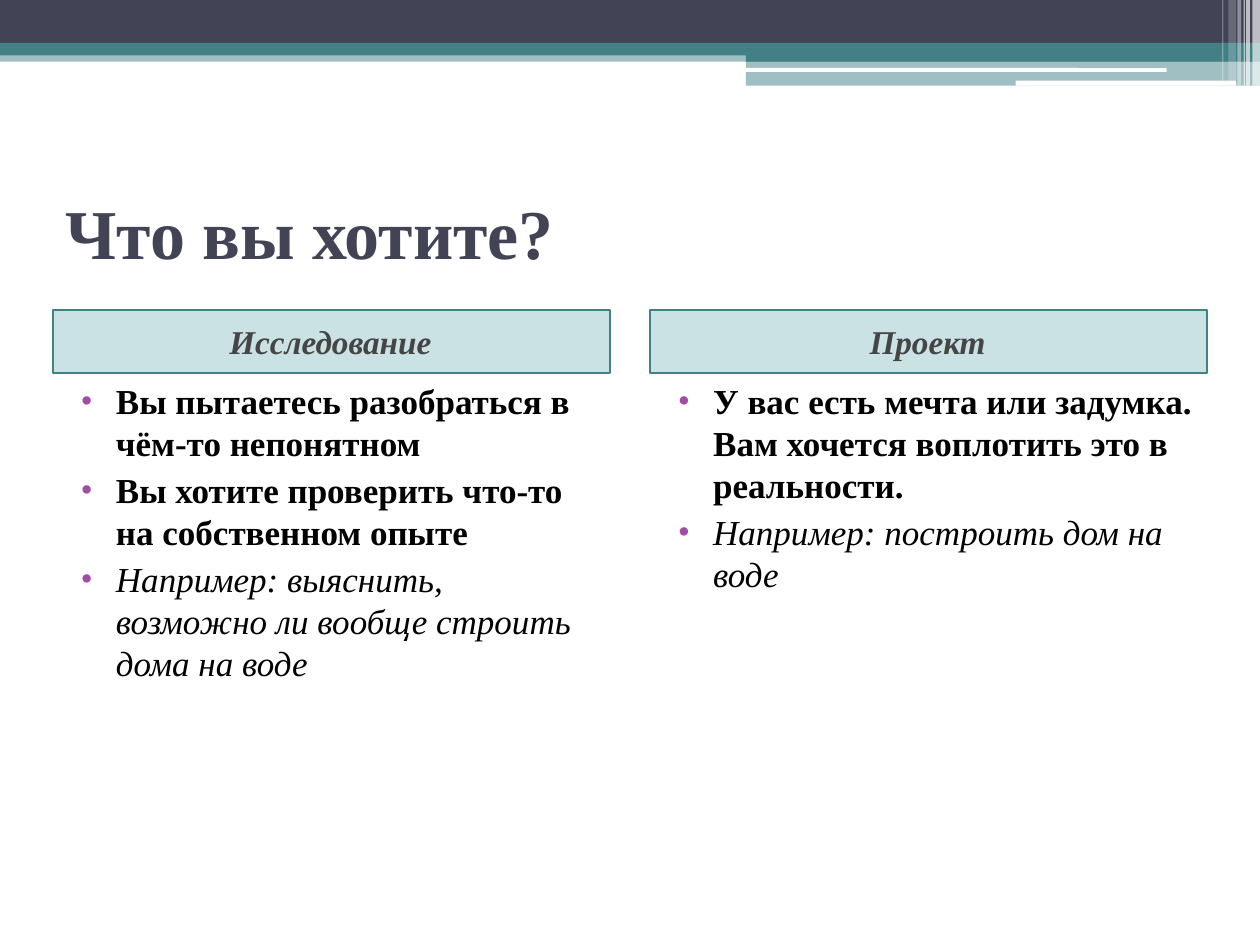
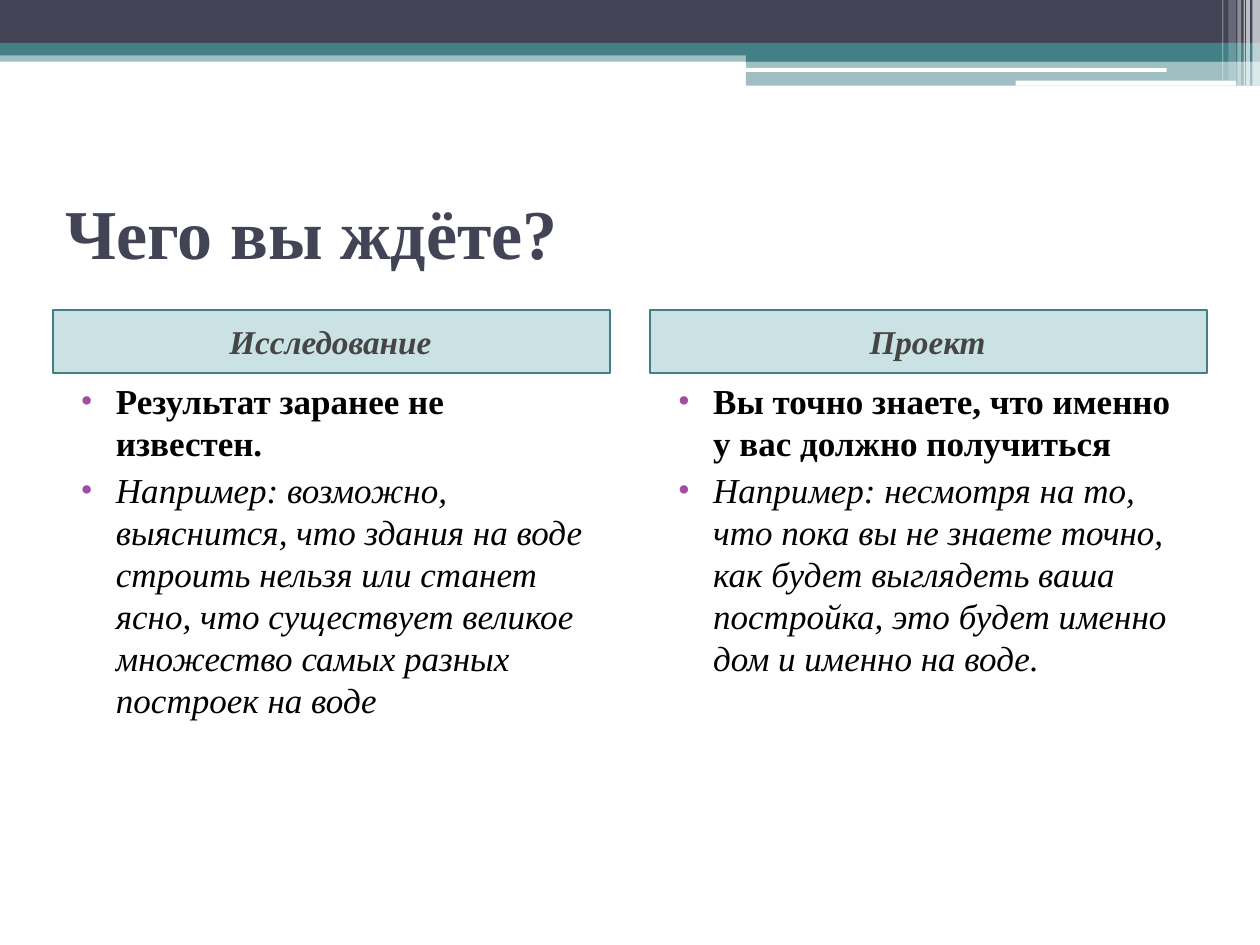
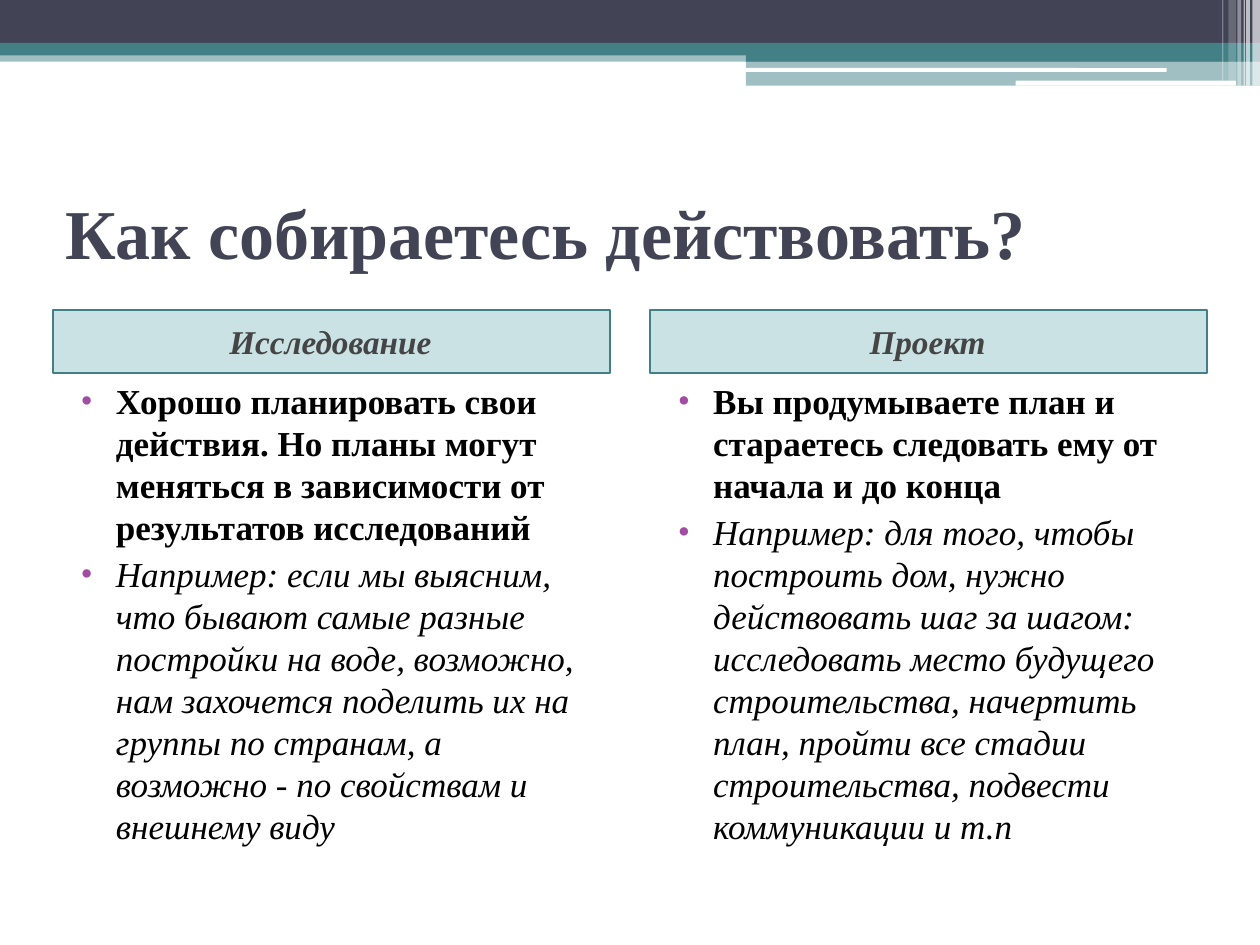
from lxml.etree import SubElement
from pptx import Presentation
from pptx.dml.color import RGBColor
from pptx.enum.shapes import MSO_SHAPE
from pptx.enum.text import MSO_ANCHOR, MSO_AUTO_SIZE, PP_ALIGN
from pptx.oxml.ns import qn
from pptx.util import Pt

COLORS = {
    "navy": "424456", "teal": "438086", "white": "FFFFFF", "header": "328E97",
    "header_text": "454545", "text": "000000", "bullet": "A04DA3",
}
RECT, ROUND = MSO_SHAPE.RECTANGLE, MSO_SHAPE.ROUNDED_RECTANGLE
BANDS = [
    (RECT, 0, 28.8, 720, 6.48, "teal", 50),
    (RECT, 0, 0, 720, 24.48, "navy", 100),
    (RECT, 0, 24.48, 720, 7.2, "teal", 100),
    (RECT, 426.24, 28.08, 293.76, 7.2, "teal", 100),
    (RECT, 426.24, 34.9, 293.76, 14.06, "teal", 50),
    (ROUND, 425.52, 38.88, 241.2, 2.16, "white", 100),
    (ROUND, 580.32, 46.08, 126, 2.88, "white", 100),
]
STRIPES = [
    (715.68, 4.32, 48.96, 65), (712.08, 2.16, 48.96, 65), (710.64, 0.72, 48.96, 60),
    (707.04, 2.16, 48.96, 40), (702, 4.32, 46.08, 20), (698.4, 0.72, 46.08, 30),
]
LEFT, TITLE_W = 30.24, 660.24
COLUMN_W, COLUMN_STEP = 318.24, 341.28
HEADERS = ["Исследование ", "Проект "]
SLIDES = [
    ("Что вы хотите?", [
        ["Вы пытаетесь разобраться в чём-то непонятном",
         "Вы хотите проверить что-то на собственном опыте",
         "Например: выяснить, возможно ли вообще строить дома на воде"],
        ["У вас есть мечта или задумка. Вам хочется воплотить это в реальности.",
         "Например: построить дом на воде"],
    ]),
    ("Чего вы ждёте?", [
        ["Результат заранее не известен.",
         "Например: возможно, выяснится, что здания на воде строить нельзя или станет ясно, "
         "что существует великое множество самых разных построек на воде"],
        ["Вы точно знаете, что именно у вас должно получиться",
         "Например: несмотря на то, что пока вы не знаете точно, как будет выглядеть ваша "
         "постройка, это будет именно дом и именно на воде."],
    ]),
    ("Как собираетесь действовать?", [
        ["Хорошо планировать свои действия. Но планы могут меняться в зависимости от "
         "результатов исследований",
         "Например: если мы выясним, что бывают самые разные постройки на воде, возможно, "
         "нам захочется поделить их на группы по странам, а возможно - по свойствам и "
         "внешнему виду"],
        ["Вы продумываете план и стараетесь следовать ему от начала и до конца",
         "Например: для того, чтобы построить дом, нужно действовать шаг за шагом: "
         "исследовать место будущего строительства, начертить план, пройти все стадии "
         "строительства, подвести коммуникации и т.п"],
    ]),
]


class Deck:
    """Holds the style, the layout and the current slide."""

    def __init__(self):
        self.font = "Times New Roman"
        self.prs = Presentation()
        self.prs.slide_width, self.prs.slide_height = Pt(720), Pt(540)
        self.layout = self.prs.slide_layouts[4]
        self.s = None

    def add_slide(self):
        self.s = self.prs.slides.add_slide(self.layout)

    def fill(self, sp, color, opacity=100):
        sp.fill.solid()
        sp.fill.fore_color.rgb = RGBColor.from_string(COLORS[color])
        if opacity < 100:
            clr = sp.element.spPr.find(".//" + qn("a:srgbClr"))
            SubElement(clr, qn("a:alpha"), val=str(opacity * 1000))

    def band(self, kind, x, y, w, h, color, opacity):
        sp = self.s.shapes.add_shape(kind, Pt(x), Pt(y), Pt(w), Pt(h))
        sp.shadow.inherit = False
        self.fill(sp, color, opacity)
        sp.line.fill.background()
        return sp

    def share_bands(self):
        shapes = [self.band(*band) for band in BANDS]
        shapes += [self.band(RECT, x, 0, w, h, "white", opacity) for x, w, h, opacity in STRIPES]
        for number, sp in enumerate(shapes, 100):
            sp.element.nvSpPr.cNvPr.set("id", str(number))
            self.layout.shapes.element.append(sp.element)

    def place(self, idx, x, y, w, h, anchor):
        sp = self.s.placeholders[idx]
        sp.left, sp.top, sp.width, sp.height = Pt(x), Pt(y), Pt(w), Pt(h)
        tf = sp.text_frame
        tf.word_wrap = True
        tf.auto_size = MSO_AUTO_SIZE.NONE
        tf.vertical_anchor = anchor
        return sp

    def format(self, p, size, color, bold=False, italic=False, align=PP_ALIGN.LEFT,
               before=0, margin=0, indent=0):
        p.alignment, p.space_before = align, Pt(before)
        pPr = p._p.get_or_add_pPr()
        pPr.set("marL", str(Pt(margin)))
        pPr.set("indent", str(Pt(indent)))
        for r in p.runs:
            r.font.name, r.font.size = self.font, Pt(size)
            r.font.bold, r.font.italic = bold, italic
            r.font.color.rgb = RGBColor.from_string(COLORS[color])

    def title(self, text):
        sp = self.place(0, LEFT, 90, TITLE_W, 84.24, MSO_ANCHOR.MIDDLE)
        sp.text_frame.text = text
        self.format(sp.text_frame.paragraphs[0], 40, "navy", bold=True)

    def header(self, idx, x, text):
        sp = self.place(idx, x, 177.12, COLUMN_W, 36, MSO_ANCHOR.MIDDLE)
        self.fill(sp, "header", 25)
        sp.line.color.rgb = RGBColor.from_string(COLORS["teal"])
        sp.line.width = Pt(1)
        sp.text_frame.text = text
        self.format(sp.text_frame.paragraphs[0], 19, "header_text", bold=True, italic=True,
                    align=PP_ALIGN.CENTER, before=3, margin=3.6)

    def bullets(self, idx, x, items):
        tf = self.place(idx, x, 213.12, COLUMN_W, 306, MSO_ANCHOR.TOP).text_frame
        tf.text = "\n".join(items)
        for p in tf.paragraphs:
            example = p.text.startswith("Например")
            self.format(p, 20, "text", bold=not example, italic=example,
                        before=3, margin=28.8, indent=-20.16)
            p.line_spacing = Pt(24)
            pPr = p._p.get_or_add_pPr()
            SubElement(SubElement(pPr, qn("a:buClr")), qn("a:srgbClr"), val=COLORS["bullet"])
            SubElement(pPr, qn("a:buFont"), typeface=self.font)
            SubElement(pPr, qn("a:buChar"), char="•")


def main():
    deck = Deck()
    for number, (title, columns) in enumerate(SLIDES):
        deck.add_slide()
        if number == 0:
            deck.share_bands()
        deck.title(title)
        for i, (header, items) in enumerate(zip(HEADERS, columns)):
            x = LEFT + i * COLUMN_STEP
            deck.header(1 + 2 * i, x, header)
            deck.bullets(2 + 2 * i, x, items)
    deck.prs.save("out.pptx")


if __name__ == "__main__":
    main()
